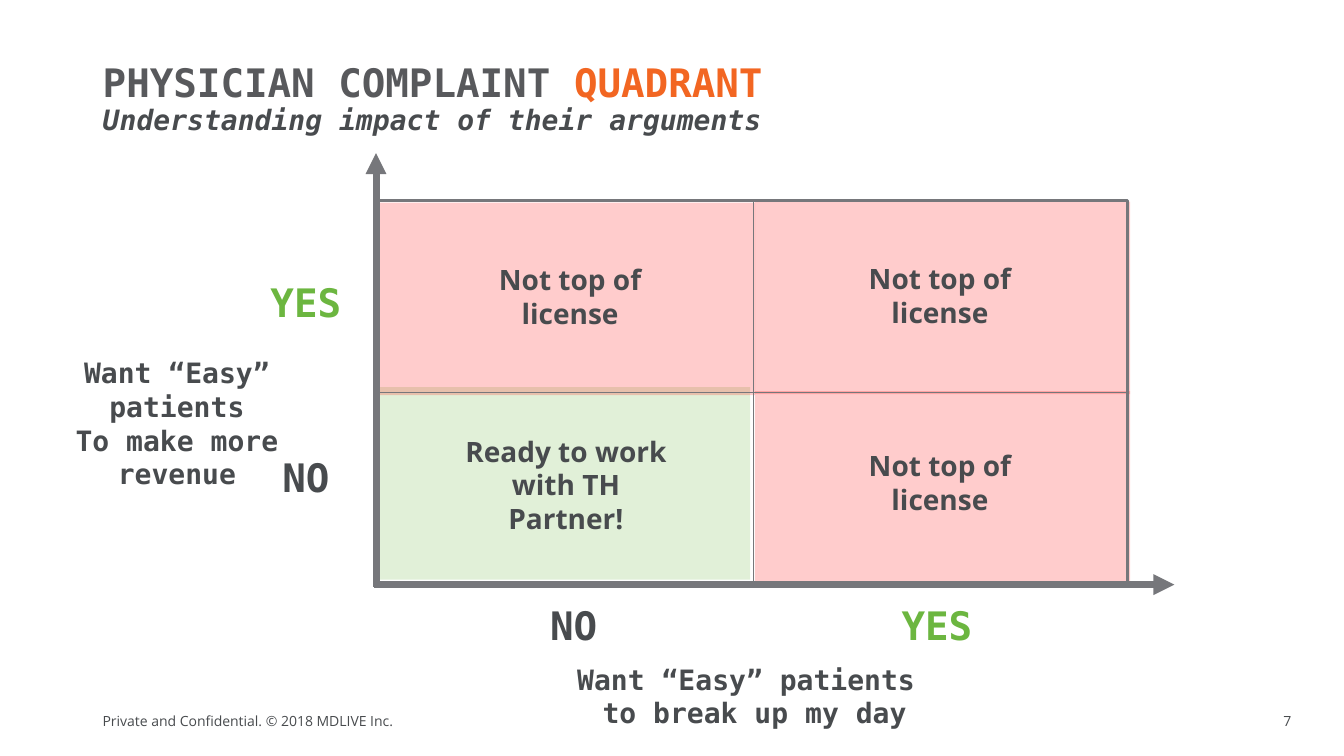
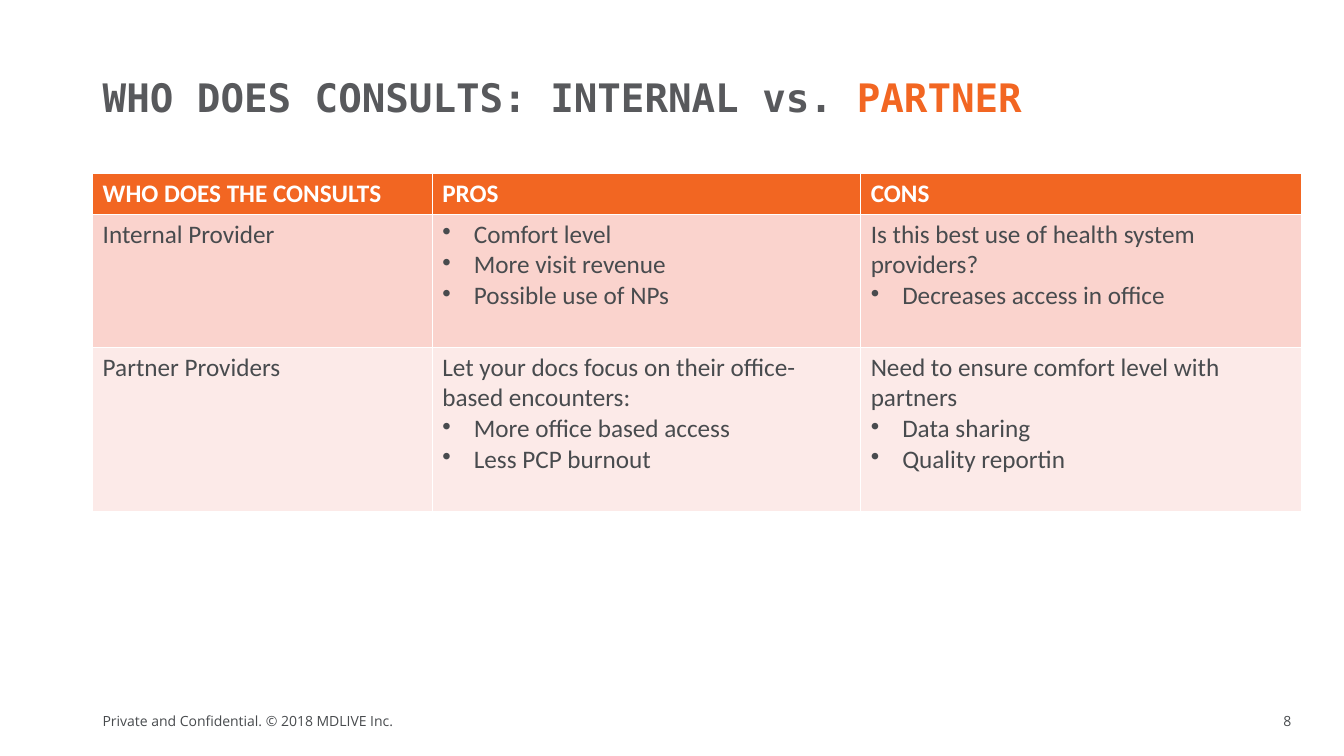
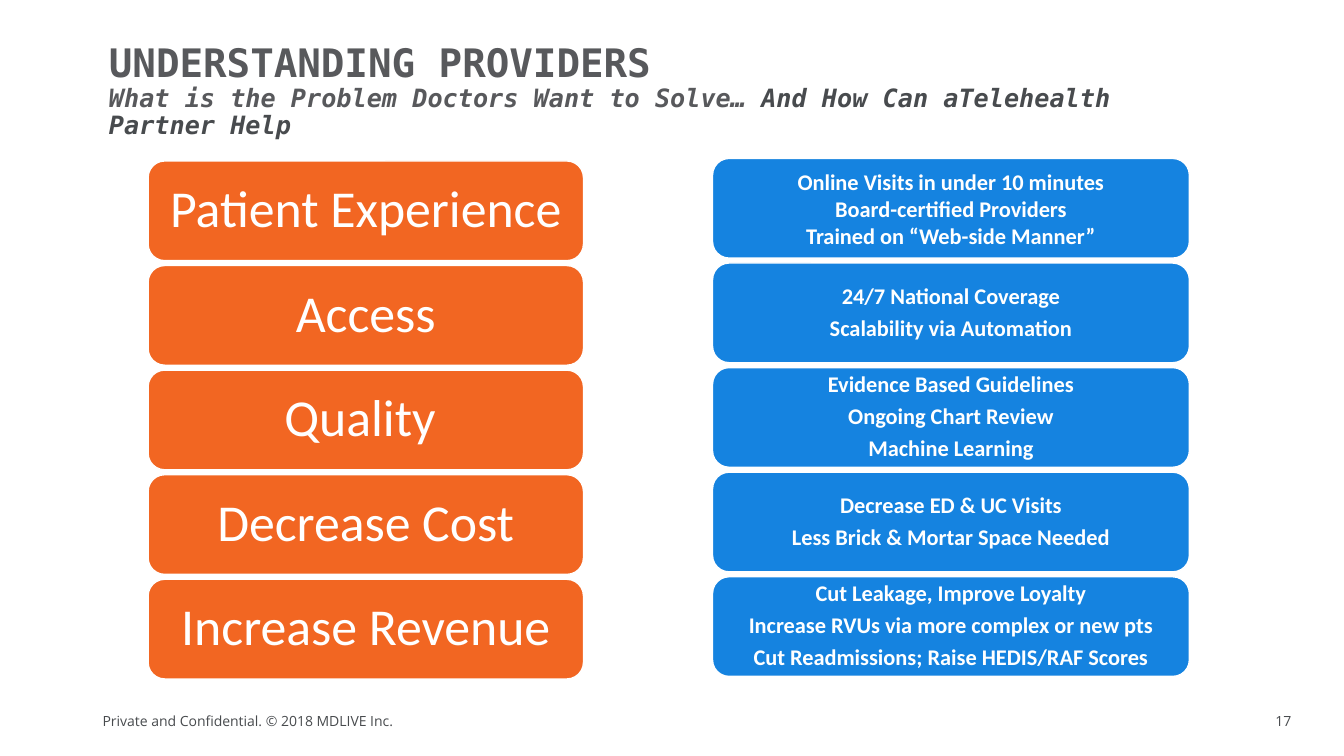
import lxml.etree
import pptx
import pptx.dml.color
import pptx.enum.shapes
import pptx.enum.text
import pptx.oxml.ns
import pptx.util

Pt = pptx.util.Pt
qn = pptx.oxml.ns.qn
ALIGN = pptx.enum.text.PP_ALIGN
ANCHOR = pptx.enum.text.MSO_ANCHOR
SHAPE = pptx.enum.shapes.MSO_SHAPE

COLORS = {
    "title": "58595C",
    "text": "484B4E",
    "orange": "F26622",
    "green": "6CB640",
    "red": "FF0000",
    "blue": "1583E0",
    "axis": "76777B",
    "white": "FFFFFF",
    "row_dark": "FAD3CD",
    "row_light": "FCEAE8",
}
MONO = {"name": "DejaVu Sans Mono", "bold": True}
TITLE = {**MONO, "size": Pt(28), "color": "title"}
ACCENT = {**TITLE, "color": "orange"}
SUBTITLE = {**MONO, "size": Pt(20), "italic": True, "color": "text"}
FOOTER = {"name": "Open Sans", "size": Pt(10), "color": "text"}
NO = {**TITLE, "color": "text"}
YES = {**TITLE, "color": "green"}
QUESTION = {**MONO, "size": Pt(20), "color": "text"}
VERDICT = {"name": "Open Sans", "size": Pt(20), "bold": True, "color": "text"}
CELL = {"name": "Calibri", "size": Pt(18), "bold": False, "color": "text"}
HEADER = {**CELL, "bold": True, "color": "white"}
GOAL = {"name": "Calibri", "size": Pt(37), "color": "white"}
ANSWER = {**GOAL, "size": Pt(16), "bold": True}


def rgb(name):
    return pptx.dml.color.RGBColor.from_string(COLORS[name])


def pts(values):
    return [Pt(v) for v in values]


def add_run(p, text, fmt):
    r = p.add_run()
    r.text = text
    for key, value in fmt.items():
        if key == "color":
            r.font.color.rgb = rgb(value)
        else:
            setattr(r.font, key, value)


def write(tf, paragraphs, **layout):
    for i, runs in enumerate(paragraphs):
        p = tf.add_paragraph() if i else tf.paragraphs[0]
        for key, value in layout.items():
            if i or key != "space_before":
                setattr(p, key, value)
        for text, fmt in runs:
            add_run(p, text, fmt)


def add_text(s, box, lines, fmt, align=ALIGN.CENTER, anchor=ANCHOR.TOP):
    tf = s.shapes.add_textbox(*pts(box)).text_frame
    tf.word_wrap = True
    tf.vertical_anchor = anchor
    write(tf, [[(line, fmt)] for line in lines], alignment=align)


def add_shape(s, kind, box, fill=None, alpha=None, line=None, width=1):
    sp = s.shapes.add_shape(kind, *pts(box))
    sp.shadow.inherit = False
    if fill:
        sp.fill.solid()
        sp.fill.fore_color.rgb = rgb(fill)
    else:
        sp.fill.background()
    if alpha:
        color = sp._element.spPr.find(".//" + qn("a:srgbClr"))
        lxml.etree.SubElement(color, qn("a:alpha"), val=str(alpha * 1000))
    if line:
        sp.line.color.rgb = rgb(line)
        sp.line.width = Pt(width)
    else:
        sp.line.fill.background()
    return sp


def add_line(s, ends, width, arrow=False):
    kind = pptx.enum.shapes.MSO_CONNECTOR.STRAIGHT
    line = s.shapes.add_connector(kind, *pts(ends))
    line.line.color.rgb = rgb("axis")
    line.line.width = Pt(width)
    spPr = line._element.spPr
    if arrow:
        lxml.etree.SubElement(spPr.find(qn("a:ln")), qn("a:tailEnd"), type="triangle")
    lxml.etree.SubElement(spPr, qn("a:effectLst"))


def add_card(s, box, fill, lines, fmt, **layout):
    sp = add_shape(s, SHAPE.ROUNDED_RECTANGLE, box, fill, line="white")
    tf = sp.text_frame
    tf.word_wrap = True
    tf.vertical_anchor = ANCHOR.MIDDLE
    write(tf, [[(line, fmt)] for line in lines], alignment=ALIGN.CENTER, **layout)


def add_cell(cell, lines, fill, fmt):
    cell.fill.solid()
    cell.fill.fore_color.rgb = rgb(fill)
    for i, line in enumerate(lines):
        p = cell.text_frame.add_paragraph() if i else cell.text_frame.paragraphs[0]
        if line.startswith("•"):
            pPr = p._p.get_or_add_pPr()
            pPr.set("marL", str(Pt(22.5)))
            pPr.set("indent", str(Pt(-22.5)))
            lxml.etree.SubElement(pPr, qn("a:buChar"), char="•")
        add_run(p, line.lstrip("•"), fmt)


def add_slide(prs, number, title, box=(66.2, 28.8, 755.3, 85)):
    s = prs.slides.add_slide(prs.slide_layouts[5])
    sp = s.shapes.title
    sp.left, sp.top, sp.width, sp.height = pts(box)
    tf = sp.text_frame
    tf.auto_size = pptx.enum.text.MSO_AUTO_SIZE.NONE
    tf.word_wrap = True
    tf.vertical_anchor = ANCHOR.MIDDLE
    write(tf, title, alignment=ALIGN.LEFT, line_spacing=0.9)
    add_text(s, (66.2, 505.4, 258.5, 19.4),
             ["Private and Confidential. © 2018 MDLIVE Inc."], FOOTER, ALIGN.LEFT)
    add_text(s, (875.5, 500.4, 54, 28.8), [str(number)], FOOTER,
             ALIGN.RIGHT, ANCHOR.MIDDLE)
    return s


def quadrant_slide(prs):
    s = add_slide(prs, 7, [
        [("PHYSICIAN COMPLAINT ", TITLE), ("QUADRANT", ACCENT)],
        [("Understanding impact of their arguments", SUBTITLE)],
    ])
    for left, top, color in [(539.3, 279.4, "red"), (539.3, 144, "red"),
                             (267.8, 276.5, "green"), (271.4, 144.7, "red")]:
        add_shape(s, SHAPE.RECTANGLE, (left, top, 268, 137.5), color, alpha=20)

    left, top, width, height = frame = (270, 143.3, 535.7, 273.6)
    right, bottom = left + width, top + height
    mid_x, mid_y = left + width / 2, top + height / 2
    add_line(s, (268.6, 419, 268.6, 109.4), 5, arrow=True)
    add_line(s, (267.1, 417.6, 838.8, 417.6), 5, arrow=True)
    add_shape(s, SHAPE.RECTANGLE, frame, line="axis", width=2.25)
    add_line(s, (left, mid_y, right, mid_y), 0.5)
    add_line(s, (mid_x, top, mid_x, bottom), 0.5)

    for x, y, text, fmt in [(361.9, 426.2, "NO", NO), (170.6, 320.4, "NO", NO),
                            (170.6, 195.1, "YES", YES), (621.4, 426.2, "YES", YES)]:
        add_text(s, (x, y, 95.8, 41), [text], fmt)
    add_text(s, (3.6, 250.6, 245.5, 55.4),
             ["Want “Easy” patients", "To make more revenue"], QUESTION)
    add_text(s, (380.2, 469.4, 317.5, 55.4),
             ["Want “Easy” patients ", "to break up my day"], QUESTION)
    for x, y, text in [(586.8, 316.8, "Not top of license"),
                       (586.8, 183.6, "Not top of license"),
                       (319.7, 306.7, "Ready to work with TH Partner!"),
                       (322.6, 184.3, "Not top of license")]:
        add_text(s, (x, y, 169.2, 55.4), [text], VERDICT)


def consults_slide(prs):
    s = add_slide(prs, 8, [
        [("WHO DOES CONSULTS: INTERNAL vs. ", TITLE), ("PARTNER", ACCENT)],
    ])
    rows = [
        (29.2, "orange", HEADER, [["WHO DOES THE CONSULTS"], ["PROS"], ["CONS"]]),
        (95, "row_dark", CELL, [
            ["Internal Provider"],
            ["•Comfort level", "•More visit revenue", "•Possible use of NPs"],
            ["Is this best use of health system providers?",
             "•Decreases access in office"],
        ]),
        (117.2, "row_light", CELL, [
            ["Partner Providers"],
            ["Let your docs focus on their office-based encounters:",
             "•More office based access", "•Less PCP burnout"],
            ["Need to ensure comfort level with partners",
             "•Data sharing", "•Quality reportin"],
        ]),
    ]
    widths = [242.6, 306, 314.6]
    box = (66.2, 123.8, sum(widths), sum(row[0] for row in rows))
    table = s.shapes.add_table(len(rows), len(widths), *pts(box)).table
    for column, width in zip(table.columns, widths):
        column.width = Pt(width)
    for i, (height, fill, fmt, cells) in enumerate(rows):
        table.rows[i].height = Pt(height)
        for j, lines in enumerate(cells):
            add_cell(table.cell(i, j), lines, fill, fmt)


def providers_slide(prs):
    small = {**SUBTITLE, "size": Pt(18)}
    s = add_slide(prs, 17, [
        [("UNDERSTANDING PROVIDERS", TITLE)],
        [("What is the Problem Doctors Want to Solve… ", {**small, "color": "title"}),
         ("And How Can aTelehealth Partner Help", small)],
    ], (70.6, 23, 801.4, 85))
    cards = [
        ("Patient Experience", ["Online Visits in under 10 minutes",
                                "Board-certified Providers",
                                "Trained on “Web-side Manner”"]),
        ("Access", ["24/7 National Coverage", "Scalability via Automation"]),
        ("Quality ", ["Evidence Based Guidelines", "Ongoing Chart Review",
                      "Machine Learning"]),
        ("Decrease Cost", ["Decrease ED & UC Visits",
                           "Less Brick & Mortar Space Needed"]),
        ("Increase Revenue", ["Cut Leakage, Improve Loyalty",
                              "Increase RVUs via more complex or new pts",
                              "Cut Readmissions; Raise HEDIS/RAF Scores"]),
    ]
    pitch, height = 74.7, 71.2
    for i, (goal, answers) in enumerate(cards):
        spacing = {"line_spacing": 0.9, "space_before": Pt(5.6)} if i else {}
        add_card(s, (105.8, 115 + i * pitch, 311, height), "orange",
                 [goal], GOAL, line_spacing=0.9)
        add_card(s, (509, 113.2 + i * pitch, 340.6, height), "blue",
                 answers, ANSWER, **spacing)


def main():
    prs = pptx.Presentation()
    prs.slide_width, prs.slide_height = Pt(960), Pt(540)
    quadrant_slide(prs)
    consults_slide(prs)
    providers_slide(prs)
    prs.save("out.pptx")


if __name__ == "__main__":
    main()
